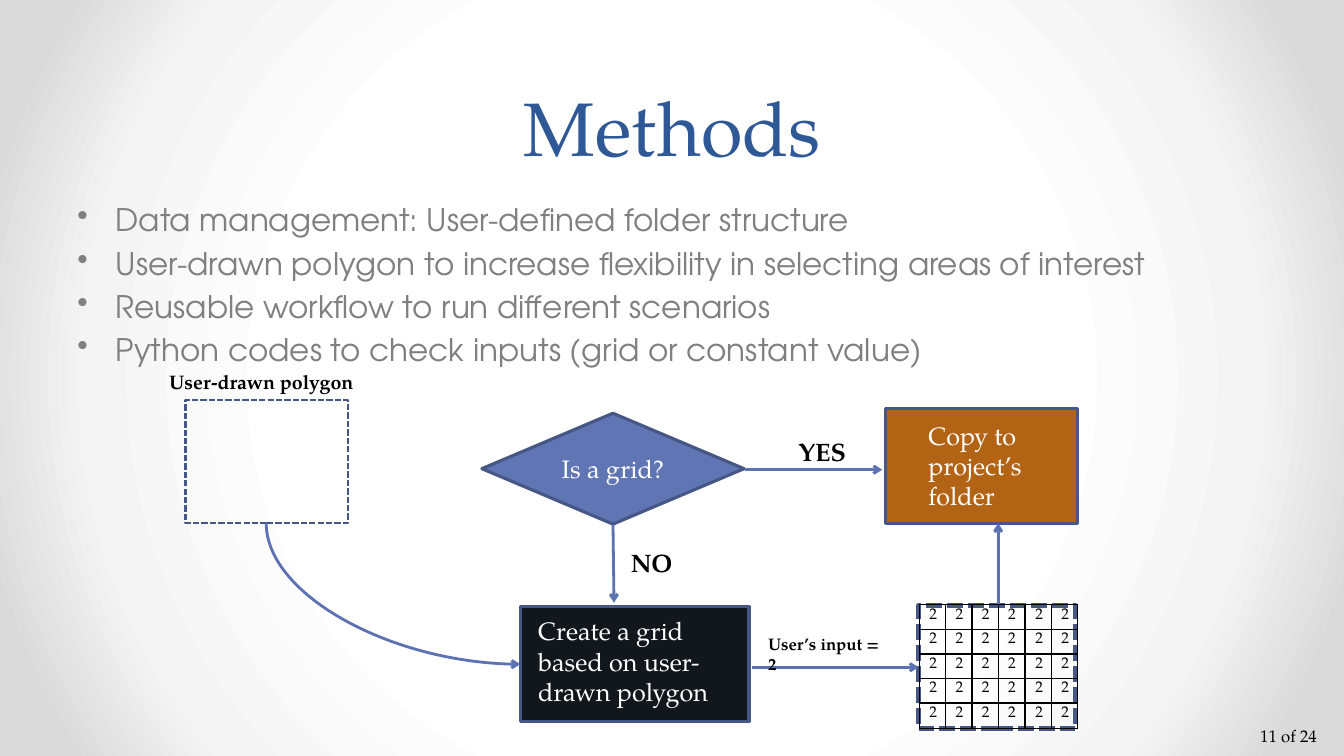
from itertools import product

from pptx import Presentation
from pptx import util as u
from pptx.dml.color import RGBColor
from pptx.enum import dml, shapes, text
from pptx.oxml import parse_xml
from pptx.oxml.ns import nsdecls, qn

PX = 9144  # EMU per px, 100 px to the inch
SERIF, SANS = "TeX Gyre Pagella", "TeX Gyre Adventor"
EDGE, ARROW, BLACK, WHITE = "475785", "5C72B2", "000000", "FFFFFF"
BULLETS = [
    "Data management: User-defined folder structure",
    "User-drawn polygon to increase flexibility in selecting areas of interest",
    "Reusable workflow to run different scenarios",
    "Python codes to check inputs (grid or constant value)",
]


def px(*values):
    return [u.Emu(v * PX) for v in values]


def color(hex_code):
    return RGBColor.from_string(hex_code)


def write(tf, *lines, size=18, font=SERIF, fill=BLACK, bold=False, align=None,
          anchor=text.MSO_ANCHOR.TOP, wrap=True, spacing=None, before=0, bullet=False):
    tf.word_wrap = wrap
    tf.vertical_anchor = anchor
    for i, line in enumerate(lines):
        p = tf.add_paragraph() if i else tf.paragraphs[0]
        p.alignment = align
        p.space_before = u.Pt(before)
        if spacing:
            p.line_spacing = u.Pt(spacing)
        if bullet:
            ppr = p._p.get_or_add_pPr()
            ppr.set("marL", str(38 * PX))
            ppr.set("indent", str(-38 * PX))
            ppr.append(parse_xml(f'<a:buChar {nsdecls("a")} char="•"/>'))
        r = p.add_run()
        r.text = line
        r.font.size, r.font.name, r.font.bold = u.Pt(size), font, bold
        r.font.color.rgb = color(fill)


def label(s, box, *lines, **fmt):
    write(s.shapes.add_textbox(*px(*box)).text_frame, *lines, **fmt)


def block(s, box, fill=None, width=2.25, dashed=False, kind=shapes.MSO_SHAPE.RECTANGLE):
    sp = s.shapes.add_shape(kind, *px(*box))
    sp.shadow.inherit = False
    if fill:
        sp.fill.solid()
        sp.fill.fore_color.rgb = color(fill)
    else:
        sp.fill.background()
    sp.line.color.rgb = color(EDGE)
    sp.line.width = u.Pt(width)
    if dashed:
        sp.line.dash_style = dml.MSO_LINE.SQUARE_DOT
    return sp


def arrow(s, ends, kind=shapes.MSO_CONNECTOR.STRAIGHT):
    c = s.shapes.add_connector(kind, *px(*ends))
    c.line.color.rgb = color(ARROW)
    c.line.width = u.Pt(2)
    c.line._get_or_add_ln().append(parse_xml(f'<a:tailEnd {nsdecls("a")} type="arrow"/>'))
    c._element.spPr.append(parse_xml(f'<a:effectLst {nsdecls("a")}/>'))
    return c


def quarter_curve(s, ends):
    """Curved arrow that leaves downwards and arrives from the left."""
    x1, y1, x2, y2 = ends
    cx, cy, half_w, half_h = (x1 + x2) // 2, (y1 + y2) // 2, (y2 - y1) // 2, (x2 - x1) // 2
    c = arrow(s, (cx + half_w, cy - half_h, cx - half_w, cy + half_h), shapes.MSO_CONNECTOR.CURVE)
    c._element.spPr.find(qn("a:xfrm")).set("rot", str(270 * 60000))
    c._element.spPr.find(qn("a:prstGeom")).set("prst", "curvedConnector2")


def value_grid(s, x, y, cols, rows):
    col_w, row_h = px(26, 24)
    frame = s.shapes.add_table(rows, cols, *px(x, y), cols * col_w, rows * row_h)
    table = frame.table
    table.first_row = table.horz_banding = False
    for col in table.columns:
        col.width = col_w
    for row in table.rows:
        row.height = row_h
    for cell in table.iter_cells():
        cell.margin_left, cell.margin_right, cell.margin_top, cell.margin_bottom = px(6, 6, 3, 3)
        write(cell.text_frame, " 2", size=11)
        for side in "LRTB":
            cell._tc.get_or_add_tcPr().append(parse_xml(
                f'<a:ln{side} {nsdecls("a")} w="12700"><a:solidFill>'
                f'<a:srgbClr val="{BLACK}"/></a:solidFill></a:ln{side}>'))
        cell.fill.background()


def radial_background(s, *stops):
    gs = "".join(f'<a:gs pos="{pos * 1000}"><a:srgbClr val="{c}"/></a:gs>' for pos, c in stops)
    s._element.cSld.insert(0, parse_xml(
        f'<p:bg {nsdecls("p", "a")}><p:bgPr><a:gradFill rotWithShape="1"><a:gsLst>{gs}</a:gsLst>'
        '<a:path path="circle"><a:fillToRect l="50000" t="50000" r="50000" b="50000"/></a:path>'
        '</a:gradFill><a:effectLst/></p:bgPr></p:bg>'))


def main():
    prs = Presentation()
    prs.slide_width, prs.slide_height = u.Inches(13.33), u.Inches(7.5)
    s = prs.slides.add_slide(prs.slide_layouts[6])
    radial_background(s, (50, WHITE), (76, "F4F4F4"), (92, "DADADA"))

    # Page number, title and bullets
    center, middle = text.PP_ALIGN.CENTER, text.MSO_ANCHOR.MIDDLE
    label(s, (1240, 715, 89, 30), "11 of 24", size=12)
    label(s, (67, 194, 1200, 242), *BULLETS, size=22.2, font=SANS, fill="808080",
          before=4.4, bullet=True)
    label(s, (67, 0, 1200, 175), "Methods", size=54, fill="2F5897", align=center,
          anchor=text.MSO_ANCHOR.BOTTOM, spacing=58)

    # Decision and its two branches
    decision = block(s, (478, 410, 260, 110), "6076B4",
                     kind=shapes.MSO_SHAPE.FLOWCHART_DECISION)
    write(decision.text_frame, "Is a grid?", fill=WHITE, align=center, anchor=middle)
    arrow(s, (739, 466, 875, 466))
    arrow(s, (608, 521, 609, 598))
    label(s, (782, 428, 68, 40), "YES", bold=True, wrap=False)
    label(s, (616, 538, 62, 40), "NO", bold=True, wrap=False)

    # Outcomes
    block(s, (878, 405, 191, 114), "B26314")
    block(s, (516, 602, 227, 114), "11171D")
    label(s, (911, 412, 133, 101), "Copy to project’s folder", fill=WHITE)
    label(s, (524, 606, 230, 101), "Create a grid based on user-drawn polygon", fill=WHITE)

    # Polygon drawn by the user
    block(s, (184, 397, 161, 122), width=1.5, dashed=True)
    label(s, (158, 362, 205, 34), "User-drawn polygon", size=14, bold=True, wrap=False)
    quarter_curve(s, (264, 519, 516, 659))

    # Grid of constant values, in four parts
    block(s, (911, 601, 156, 122), width=3.75, dashed=True)
    for (y, rows), (x, cols) in product([(600, 4), (698, 1)], [(912, 4), (1017, 2)]):
        value_grid(s, x, y, cols, rows)
    arrow(s, (746, 662, 911, 662))
    label(s, (752, 624, 140, 30), "User’s input = 2", size=12, bold=True)
    arrow(s, (990, 599, 990, 519))

    prs.save("out.pptx")


if __name__ == "__main__":
    main()
